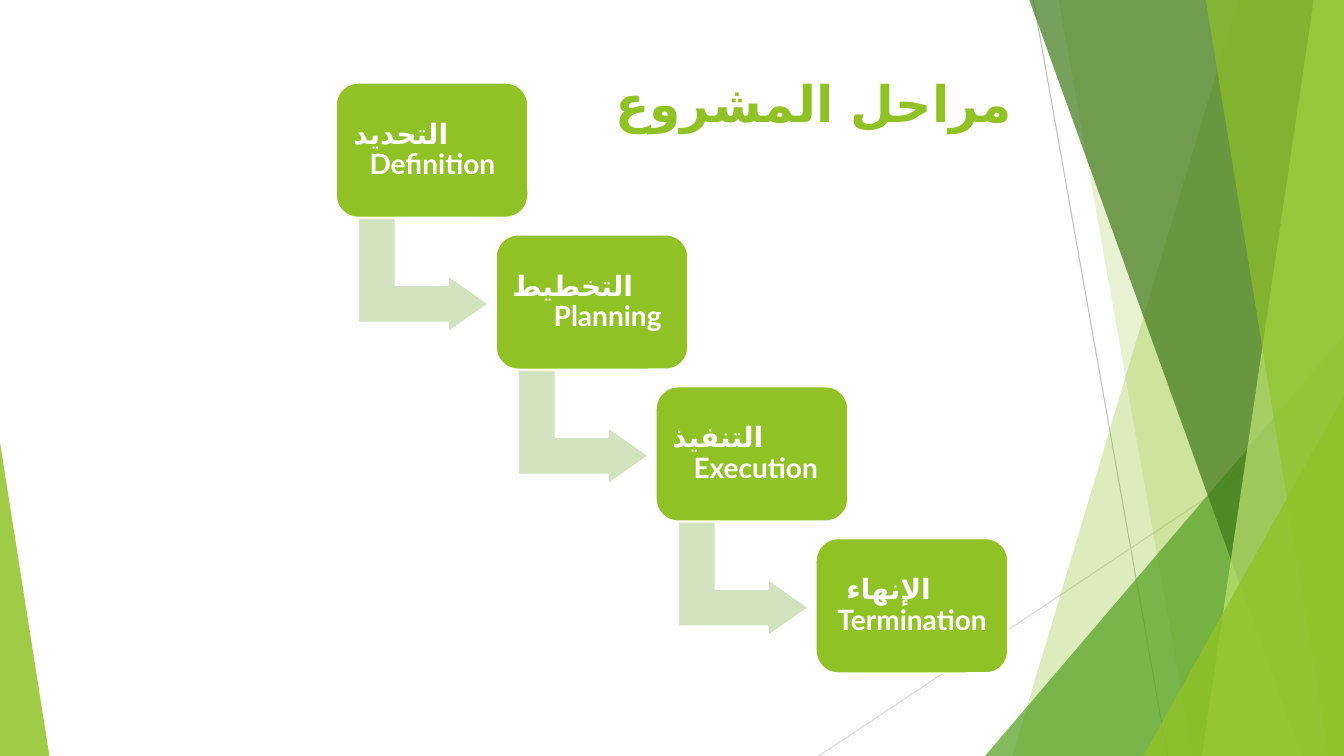
import pptx
import pptx.dml.color
import pptx.enum.shapes
import pptx.enum.text
import pptx.oxml.ns
import pptx.util
from lxml import etree

Inches = pptx.util.Inches
RGBColor = pptx.dml.color.RGBColor
SHAPES = pptx.enum.shapes.MSO_SHAPE
ALIGN = pptx.enum.text.PP_ALIGN
ANCHOR = pptx.enum.text.MSO_ANCHOR
qn = pptx.oxml.ns.qn

LIME = RGBColor(0x90, 0xC2, 0x26)
LEAF = RGBColor(0x54, 0xA0, 0x21)
FOREST = RGBColor(0x3F, 0x78, 0x19)
PALE_LIME = RGBColor(0xC0, 0xE4, 0x74)
ARROW_GREEN = RGBColor(0xD1, 0xE3, 0xBE)
WHITE = RGBColor(0xFF, 0xFF, 0xFF)
GREY = RGBColor(0xBF, 0xBF, 0xBF)
LIGHT_GREY = RGBColor(0xD9, 0xD9, 0xD9)
FONT = "Lato"
ARABIC_FONT = "DejaVu Sans"
WIDTH, HEIGHT = 13.33, 7.5

presentation = pptx.Presentation()
presentation.slide_width = Inches(WIDTH)
presentation.slide_height = Inches(HEIGHT)
slide = presentation.slides.add_slide(presentation.slide_layouts[5])
shapes = slide.shapes


def add_band(top_x, bottom_x):
    """Add a full-height band from a slanted left edge to the right slide edge."""
    builder = shapes.build_freeform(Inches(top_x), 0)
    corners = [(WIDTH, 0), (WIDTH, HEIGHT), (bottom_x, HEIGHT)]
    builder.add_line_segments([(Inches(x), Inches(y)) for x, y in corners])
    return builder.convert_to_shape()


def add_corner_triangle(left, width, height, apex):
    """Add a triangle standing on the bottom slide edge."""
    triangle = shapes.add_shape(SHAPES.ISOSCELES_TRIANGLE, Inches(left), Inches(HEIGHT - height),
                                Inches(width), Inches(height))
    triangle.adjustments[0] = apex
    return triangle


# Background lines and facets, from back to front
for start_x, start_y, end_x, color in [(10.25, 0, 11.58, GREY), (WIDTH, 4.03, 8.12, LIGHT_GREY)]:
    connector = shapes.add_connector(pptx.enum.shapes.MSO_CONNECTOR.STRAIGHT, Inches(start_x),
                                     Inches(start_y), Inches(end_x), Inches(HEIGHT))
    connector.line.color.rgb = color
    connector.line.width = pptx.util.Pt(0.75)
    etree.SubElement(connector.element.spPr, qn("a:effectLst"))

facets = [
    (add_band(12.28, 10.04), LIME, 30),
    (add_band(10.5, 11.83), LIME, 20),
    (add_corner_triangle(9.77, 3.56, 4.17, 1), LEAF, 72),
    (add_band(10.21, 12.91), FOREST, 70),
    (add_band(13.03, 11.92), PALE_LIME, 70),
    (add_band(11.96, 13.18), LIME, 65),
    (add_corner_triangle(11.34, 1.99, 3.57, 1), LIME, 80),
    (add_corner_triangle(0, 0.49, 3.11, 0), LIME, 85),
]
for facet, color, opacity in facets:
    facet.shadow.inherit = False
    facet.fill.solid()
    facet.fill.fore_color.rgb = color
    color_element = facet.element.spPr.find(qn("a:solidFill"))[0]
    etree.SubElement(color_element, qn("a:alpha"), val=str(opacity * 1000))
    facet.line.fill.background()

# Title
title = shapes.title
title.left, title.top, title.width, title.height = map(Inches, (0.74, 0.67, 9.4, 1.44))
title.text_frame.text = "مراحل المشروع"
title.text_frame.vertical_anchor = ANCHOR.TOP
title_paragraph = title.text_frame.paragraphs[0]
title_paragraph.alignment = ALIGN.JUSTIFY
title_paragraph._p.get_or_add_pPr().set("rtl", "1")
text_styles = [(title_paragraph, 36, LIME)]

# Steps: each name with its indent inside the box
FIRST_X, FIRST_Y, LAST_X, LAST_Y = 3.33, 0.82, 8.09, 5.34
BOX_WIDTH, BOX_HEIGHT = 1.91, 1.34
steps = [
    [("التحديد", 0.11), ("Definition", 0.27)],
    [("التخطيط", 0.1), ("Planning", 0.51)],
    [("التنفيذ", 0.1), ("Execution", 0.31)],
    [("الإنهاء", 0.24), ("Termination", 0.15)],
]
last = len(steps) - 1
for index, names in enumerate(steps):
    left = FIRST_X + index * (LAST_X - FIRST_X) / last
    top = FIRST_Y + index * (LAST_Y - FIRST_Y) / last
    parts = []
    if index < last:
        arrow = shapes.add_shape(SHAPES.BENT_UP_ARROW, Inches(left + 0.3), Inches(top + 1.26),
                                 Inches(1.14), Inches(1.3))
        arrow.rotation = 90
        for position, value in enumerate([0.328, 0.25, 0.358]):
            arrow.adjustments[position] = value
        parts.append((arrow, ARROW_GREEN))
    box = shapes.add_shape(SHAPES.ROUNDED_RECTANGLE, Inches(left), Inches(top),
                           Inches(BOX_WIDTH), Inches(BOX_HEIGHT))
    parts.append((box, LIME))
    for shape, color in parts:
        shape.shadow.inherit = False
        shape.fill.solid()
        shape.fill.fore_color.rgb = color
        shape.line.color.rgb = WHITE
        shape.line.width = pptx.util.Pt(1.5)

    frame = box.text_frame
    frame.text = "\n".join(name for name, indent in names)
    frame.word_wrap = True
    frame.vertical_anchor = ANCHOR.MIDDLE
    frame.margin_left = frame.margin_right = 0
    for paragraph, (name, indent) in zip(frame.paragraphs, names):
        paragraph.alignment = ALIGN.LEFT
        paragraph.line_spacing = 0.9
        paragraph._p.get_or_add_pPr().set("marL", str(Inches(indent)))
        text_styles.append((paragraph, 20, WHITE))

for paragraph, size, color in text_styles:
    for run in paragraph.runs:
        run.font.name = FONT
        run.font.size = pptx.util.Pt(size)
        run.font.bold = True
        run.font.color.rgb = color
        etree.SubElement(run.font._element, qn("a:cs"), typeface=ARABIC_FONT)

presentation.save("out.pptx")
